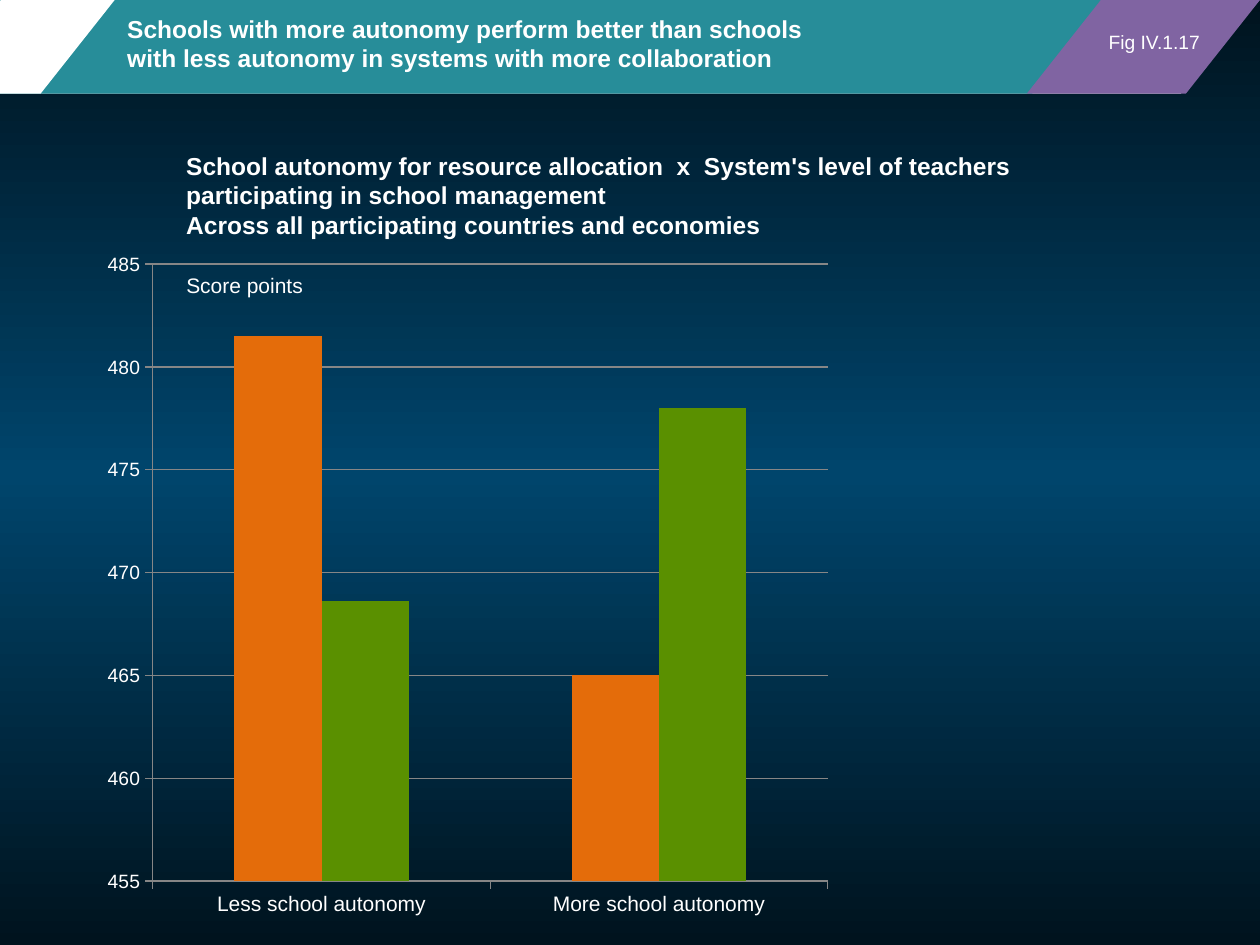
from dataclasses import dataclass
from lxml.etree import SubElement
from pptx import Presentation
from pptx.chart.data import CategoryChartData
from pptx.dml.color import RGBColor
from pptx.enum.chart import XL_CHART_TYPE, XL_TICK_MARK
from pptx.enum.shapes import MSO_SHAPE
from pptx.enum.text import MSO_ANCHOR, PP_ALIGN
from pptx.oxml import parse_xml
from pptx.oxml.ns import nsdecls, qn
from pptx.util import Inches, Pt


@dataclass(frozen=True)
class Theme:
    font: str = "Arial"
    head: int = 14
    body: int = 12
    small: int = 11
    dark: str = "00131E"
    mid: str = "00456C"
    white: str = "FFFFFF"
    teal: str = "278D99"
    purple: str = "8064A2"
    orange: str = "E46C0A"
    green: str = "5A9000"
    grid: str = "868686"


@dataclass(frozen=True)
class Box:
    left: float
    top: float
    width: float
    height: float

    def inner(self, x, y, w, h):
        return Box(self.left + x * self.width, self.top + y * self.height,
                   w * self.width, h * self.height)

    def place(self):
        return [Inches(n) for n in (self.left, self.top, self.width, self.height)]


THEME = Theme()
PAGE = Box(0, 0, 10, 7.5)


def color(name):
    return RGBColor.from_string(name)


def style(font, size, bold=False):
    font.name = THEME.font
    font.size = Pt(size)
    font.bold = bold
    font.color.rgb = color(THEME.white)


def write(frame, lines, size, bold=False):
    frame.word_wrap = True
    for i, line in enumerate(lines):
        para = frame.paragraphs[0] if i == 0 else frame.add_paragraph()
        para.alignment = PP_ALIGN.LEFT
        run = para.add_run()
        run.text = line
        style(run.font, size, bold)


def label(slide, box, lines, size, bold=False):
    write(slide.shapes.add_textbox(*box.place()).text_frame, lines, size, bold)


def slant(slide, box, fill):
    shape = slide.shapes.add_shape(MSO_SHAPE.PARALLELOGRAM, *box.place())
    shape.adjustments[0] = 0.791
    shape.shadow.inherit = False
    shape.fill.solid()
    shape.fill.fore_color.rgb = color(fill)
    shape.line.fill.background()


def backdrop(slide):
    stops = ((0, THEME.dark), (50, THEME.mid), (100, THEME.dark))
    marks = "".join(f'<a:gs pos="{pos * 1000}"><a:srgbClr val="{tone}"/></a:gs>'
                    for pos, tone in stops)
    slide._element.cSld.insert(0, parse_xml(
        f'<p:bg {nsdecls("p", "a")}><p:bgPr><a:gradFill><a:gsLst>{marks}</a:gsLst>'
        '<a:lin ang="5400000" scaled="0"/></a:gradFill><a:effectLst/></p:bgPr></p:bg>'))


def banner(slide, box):
    bands = ((-0.02, 1.016, THEME.white), (-0.059, 0.937, THEME.teal),
             (-0.058, 0.149, THEME.white), (0.815, 0.185, THEME.purple))
    for x, w, fill in bands:
        slant(slide, box.inner(x, 0, w, 1), fill)
    title = slide.shapes.title
    slide.shapes._spTree.append(title._element)
    title.left, title.top, title.width, title.height = box.inner(0.091, 0, 0.598, 0.92).place()
    title.text_frame.vertical_anchor = MSO_ANCHOR.MIDDLE
    write(title.text_frame, ["Schools with more autonomy perform better than schools "
                             "with less autonomy in systems with more collaboration"],
          THEME.head, True)
    label(slide, box.inner(0.87, 0.26, 0.11, 0.55), ["Fig IV.1.17"], THEME.small)


def layout(plot):
    area = plot._element.getparent()
    old = area.find(qn("c:layout"))
    if old is not None:
        area.remove(old)
    node = area.makeelement(qn("c:layout"))
    area.insert(0, node)
    manual = SubElement(node, qn("c:manualLayout"))
    rules = (("layoutTarget", "inner"), ("xMode", "edge"), ("yMode", "edge"),
             ("x", 0.113), ("y", 0.045), ("w", 0.598), ("h", 0.868))
    for tag, val in rules:
        SubElement(manual, qn(f"c:{tag}")).set("val", str(val))


def bars(slide, box):
    data = CategoryChartData()
    data.categories = ["Less school autonomy", "More school autonomy"]
    data.add_series("Series 1", (481.5, 465))
    data.add_series("Series 2", (468.6, 478))
    chart = slide.shapes.add_chart(XL_CHART_TYPE.COLUMN_CLUSTERED, *box.place(), data).chart
    chart.has_legend = False
    chart.has_title = False
    style(chart.font, THEME.body)
    plot = chart.plots[0]
    plot.gap_width = 186
    plot.overlap = 0
    plot.vary_by_categories = False
    layout(plot)
    for series, fill in zip(plot.series, (THEME.orange, THEME.green)):
        series.format.fill.solid()
        series.format.fill.fore_color.rgb = color(fill)
    scale = chart.value_axis
    scale.minimum_scale, scale.maximum_scale, scale.major_unit = 455, 485, 5
    scale.has_major_gridlines = True
    scale.tick_labels.number_format = "0"
    scale.tick_labels.number_format_is_linked = False
    for axis, size in ((chart.category_axis, THEME.body), (scale, THEME.small)):
        axis.major_tick_mark = XL_TICK_MARK.OUTSIDE
        style(axis.tick_labels.font, size)
    for item in (chart.category_axis, scale, scale.major_gridlines):
        item.format.line.color.rgb = color(THEME.grid)
        item.format.line.width = Pt(0.75)


def figure(slide, box):
    bars(slide, box.inner(0.02, 0.12, 0.896, 0.88))
    label(slide, box.inner(0.138, 0.163, 0.165, 0.047), ["Score points"], THEME.body)
    label(slide, box.inner(0.138, 0.012, 0.677, 0.126),
          ["School autonomy for resource allocation  x  System's level of teachers "
           "participating in school management",
           "Across all participating countries and economies"], THEME.head, True)


def main():
    deck = Presentation()
    deck.slide_width, deck.slide_height = PAGE.place()[2:]
    slide = deck.slides.add_slide(deck.slide_layouts[5])
    backdrop(slide)
    banner(slide, PAGE.inner(0, 0, 1, 0.099))
    figure(slide, PAGE.inner(0, 0.143, 1, 0.855))
    deck.save("out.pptx")


if __name__ == "__main__":
    main()
